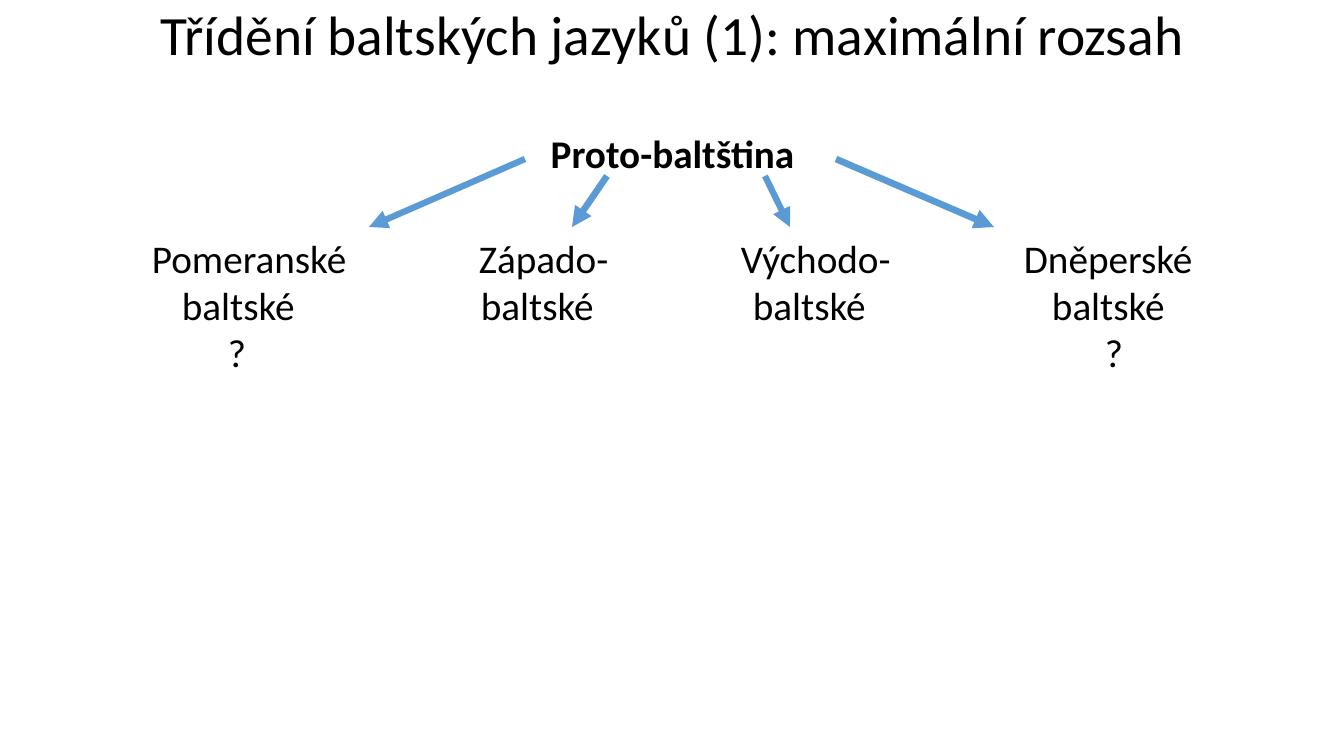
from lxml import etree
from pptx import Presentation
from pptx.dml.color import RGBColor
from pptx.enum.shapes import MSO_CONNECTOR
from pptx.enum.text import MSO_ANCHOR, MSO_AUTO_SIZE, PP_ALIGN
from pptx.oxml.ns import qn
from pptx.util import Pt

TITLE = "Třídění baltských jazyků (1): maximální rozsah"
ROOT = "Proto-baltština"
BRANCHES = [
    [("Pomeranské", 152), ("baltské", 182), ("?", 228)],
    [("Západo-", 479), ("baltské", 481)],
    [("Východo-", 741), ("baltské", 753)],
    [("Dněperské", 1024), ("baltské", 1052), ("?", 1105)],
]
ARROWS = [
    ((525, 159), (369, 227), 4.5),
    ((607, 176), (572, 227), 4.75),
    ((765, 176), (790, 227), 4.5),
    ((836, 159), (994, 227), 4.75),
]
SLIDE_SIZE = (1344, 756)
TITLE_BOX = (93, 0, 1159, 75)
BODY_BOX = (93, 130, 1159, 534)
BRANCH_TOP, BRANCH_WIDTH, LINE_HEIGHT = 234, 220, 47
FONT = "Calibri"
BLACK = RGBColor(0x00, 0x00, 0x00)
BLUE = RGBColor(0x5B, 0x9B, 0xD5)
STRAIGHT = MSO_CONNECTOR.STRAIGHT
MIDDLE, TOP = MSO_ANCHOR.MIDDLE, MSO_ANCHOR.TOP
CENTER, LEFT = PP_ALIGN.CENTER, PP_ALIGN.LEFT
NO_AUTOFIT = MSO_AUTO_SIZE.NONE


def px(length):
    return round(length * 914400 / 100.8)


def place(shape, box, anchor):
    shape.left, shape.top, shape.width, shape.height = map(px, box)
    shape.text_frame.auto_size = NO_AUTOFIT
    shape.text_frame.vertical_anchor = anchor


def format_paragraph(paragraph, size, alignment, line_spacing, space_before, bold=False):
    paragraph.alignment = alignment
    paragraph.line_spacing = line_spacing
    paragraph.space_before = Pt(space_before)
    for run in paragraph.runs:
        run.font.name = FONT
        run.font.size = Pt(size)
        run.font.bold = bold
        run.font.color.rgb = BLACK


def set_indent(paragraph, indent):
    properties = paragraph._p.get_or_add_pPr()
    properties.set("marL", str(px(indent)))
    properties.set("indent", "0")
    etree.SubElement(properties, qn("a:buNone"))


def add_branch(slide, lines):
    left = lines[0][1]
    box = (left, BRANCH_TOP, BRANCH_WIDTH, LINE_HEIGHT * len(lines))
    text_box = slide.shapes.add_textbox(*map(px, box))
    frame = text_box.text_frame
    frame.word_wrap = True
    frame.margin_left = frame.margin_right = frame.margin_top = frame.margin_bottom = 0
    frame.text = "\n".join(word for word, word_left in lines)
    for paragraph, (word, word_left) in zip(frame.paragraphs, lines):
        format_paragraph(paragraph, 28, LEFT, 1.0, 0)
        set_indent(paragraph, word_left - left)


def add_arrow(slide, start, end, width):
    arrow = slide.shapes.add_connector(STRAIGHT, *map(px, start + end))
    arrow.line.color.rgb = BLUE
    arrow.line.width = Pt(width)
    etree.SubElement(arrow.line._get_or_add_ln(), qn("a:tailEnd"), type="triangle")
    etree.SubElement(arrow._element.spPr, qn("a:effectLst"))


def main():
    presentation = Presentation()
    presentation.slide_width, presentation.slide_height = map(px, SLIDE_SIZE)
    slide = presentation.slides.add_slide(presentation.slide_layouts[1])

    title = slide.shapes.title
    place(title, TITLE_BOX, MIDDLE)
    title.text_frame.text = TITLE
    format_paragraph(title.text_frame.paragraphs[0], 39.6, CENTER, 0.9, 0)

    body = slide.placeholders[1]
    place(body, BODY_BOX, TOP)
    body.text_frame.text = ROOT
    root = body.text_frame.paragraphs[0]
    format_paragraph(root, 28, CENTER, 0.9, 10, bold=True)
    set_indent(root, 0)

    for lines in BRANCHES:
        add_branch(slide, lines)
    for start, end, width in ARROWS:
        add_arrow(slide, start, end, width)

    presentation.save("out.pptx")


if __name__ == "__main__":
    main()
